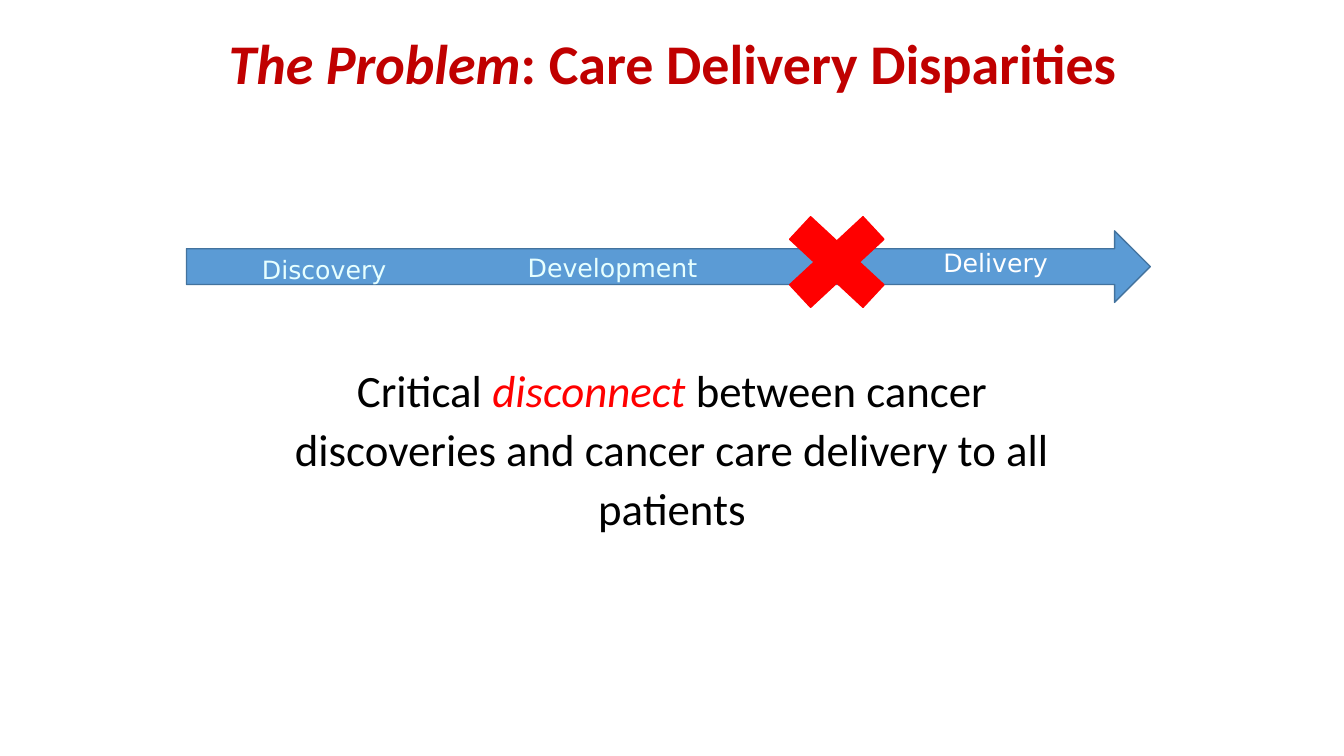
from dataclasses import dataclass

from pptx import Presentation, util as u
from pptx.dml.color import RGBColor
from pptx.enum import shapes, text

# Content: runs are (wording, italic, colour name); boxes are left, top, width, height in px
TITLE = [("The Problem", True, "title"), (": Care Delivery Disparities", False, "title")]
TITLE_BOX = (134, 31, 1066, 125)
MESSAGE = [
    ("Critical ", False, "ink"),
    ("disconnect", True, "alert"),
    (" between cancer discoveries and cancer care delivery to all patients", False, "ink"),
]
MESSAGE_BOX = (274, 349, 785, 188)
STAGES = [
    ("Discovery", (240, 247, 163, 40), "pale"),
    ("Development", (510, 245, 195, 40), "pale"),
    ("Delivery", (916, 240, 143, 40), "white"),
]
PIPELINE_BOX = (185, 229, 956, 71)
BREAK_BOX = (760, 195, 140, 130)


@dataclass(frozen=True)
class Theme:
    title: str = "C00000"
    ink: str = "000000"
    alert: str = "FF0000"
    pale: str = "E6FFFF"
    white: str = "FFFFFF"
    arrow: str = "5B9BD5"
    outline: str = "43739E"
    font: str = "Calibri"
    label_font: str = "DejaVu Sans"
    title_size: int = 40
    message_size: int = 32
    label_size: int = 18


theme = Theme()
PX = u.Inches(1) // 100


def emu(box):
    return [length * PX for length in box]


def color(name):
    return RGBColor.from_string(getattr(theme, name))


def write(frame, runs, font, size, spacing=1.0, bold=False):
    frame.word_wrap = True
    frame.auto_size = text.MSO_AUTO_SIZE.NONE
    frame.vertical_anchor = text.MSO_ANCHOR.TOP
    paragraph = frame.paragraphs[0]
    paragraph.alignment = text.PP_ALIGN.CENTER
    paragraph.line_spacing = spacing
    paragraph.space_before = u.Pt(0)
    paragraph.font.name, paragraph.font.size = font, u.Pt(size)
    paragraph.font.bold = bold
    for wording, italic, ink in runs:
        run = paragraph.add_run()
        run.text = wording
        run.font.italic = italic
        run.font.color.rgb = color(ink)
    return paragraph


def add_solid(preset, box, fill, line):
    solid = slide.shapes.add_shape(preset, *emu(box))
    solid.shadow.inherit = False
    solid.fill.solid()
    solid.fill.fore_color.rgb = color(fill)
    solid.line.color.rgb = color(line)
    solid.line.width = u.Pt(1)


prs = Presentation()
prs.slide_width, prs.slide_height = emu((1333, 750))
slide = prs.slides.add_slide(prs.slide_layouts[1])

# Title and message
title, message = slide.placeholders
for holder, box in ((title, TITLE_BOX), (message, MESSAGE_BOX)):
    holder.left, holder.top, holder.width, holder.height = emu(box)
write(title.text_frame, TITLE, theme.font, theme.title_size, 0.9, True)
statement = write(message.text_frame, MESSAGE, theme.font, theme.message_size, 1.1)

# Message without bullet or indent
properties = statement._p.get_or_add_pPr()
properties.set("marL", "0")
properties.set("indent", "0")
properties.insert_element_before(
    properties.makeelement("{http://schemas.openxmlformats.org/drawingml/2006/main}buNone"),
    "a:tabLst", "a:defRPr", "a:extLst")

# Pipeline arrow with its stages, then the break across it
add_solid(shapes.MSO_SHAPE.RIGHT_ARROW, PIPELINE_BOX, "arrow", "outline")
for stage, box, ink in STAGES:
    label = slide.shapes.add_textbox(*emu(box))
    write(label.text_frame, [(stage, False, ink)], theme.label_font, theme.label_size)
add_solid(shapes.MSO_SHAPE.MATH_MULTIPLY, BREAK_BOX, "alert", "alert")

prs.save("out.pptx")
